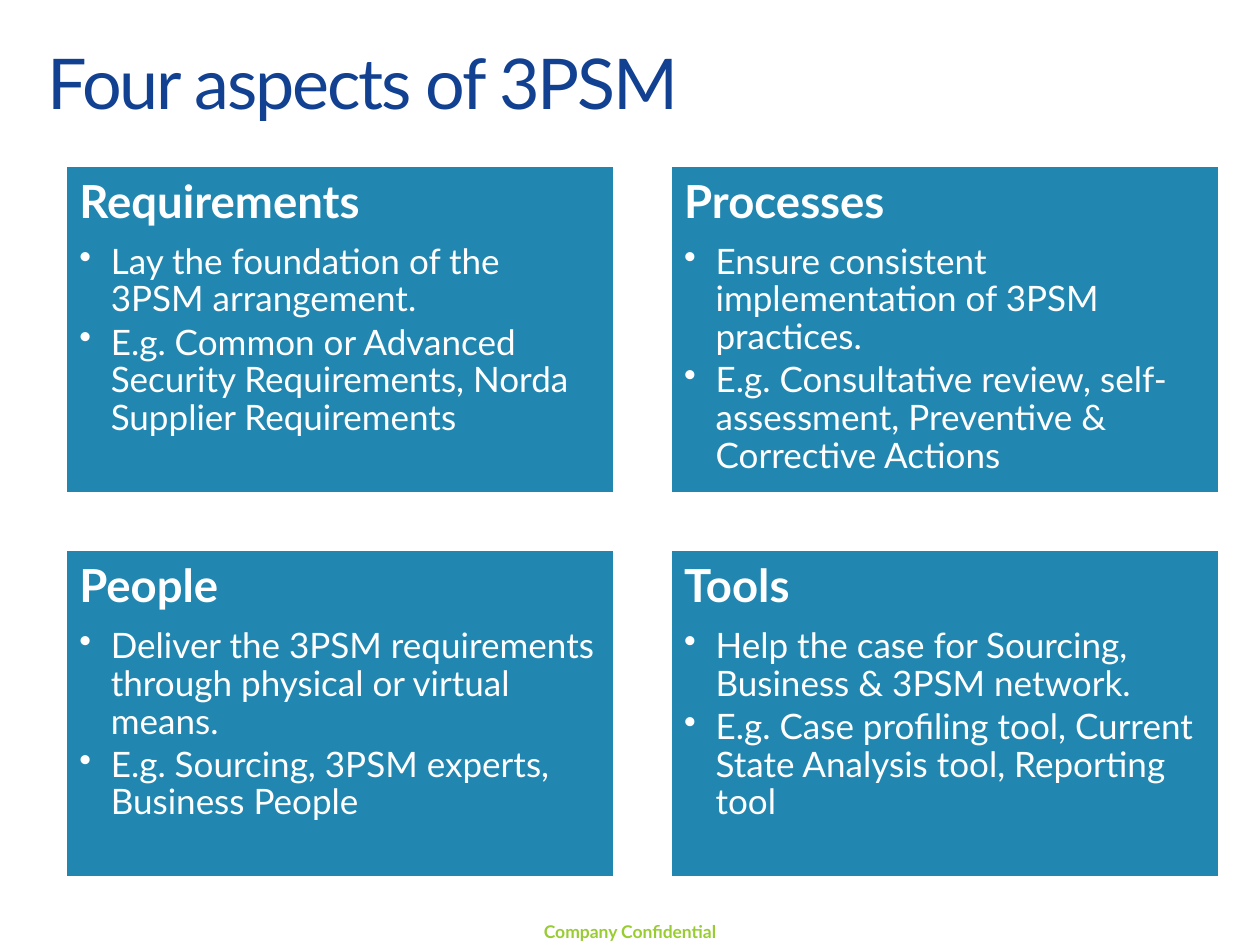
from lxml.etree import SubElement
from pptx import Presentation
from pptx.dml.color import RGBColor
from pptx.enum.shapes import MSO_SHAPE
from pptx.enum.text import MSO_ANCHOR, MSO_AUTO_SIZE, PP_ALIGN
from pptx.oxml.ns import qn
from pptx.util import Inches, Pt

FONT = "Lato"
WHITE, BLUE, NAVY, GREEN = "FFFFFF", "2187B0", "124191", "99CC33"

ASPECTS = [
    ("Requirements", [
        "Lay the foundation of the 3PSM arrangement.",
        "E.g. Common or Advanced Security Requirements, Norda Supplier Requirements",
    ]),
    ("Processes", [
        "Ensure consistent implementation of 3PSM practices.",
        "E.g. Consultative review, self-assessment, Preventive & Corrective Actions",
    ]),
    ("People", [
        "Deliver the 3PSM requirements through physical or virtual means.",
        "E.g. Sourcing, 3PSM experts, Business People",
    ]),
    ("Tools", [
        "Help the case for Sourcing, Business & 3PSM network.",
        "E.g. Case profiling tool, Current State Analysis tool, Reporting tool",
    ]),
]


def color(hex_string):
    return RGBColor.from_string(hex_string)


def write(paragraph, text, size, hex_string, bold=False, align=PP_ALIGN.LEFT):
    paragraph.text = text
    paragraph.alignment = align
    font = paragraph.font
    font.name, font.size, font.bold = FONT, Pt(size), bold
    font.color.rgb = color(hex_string)


def set_insets(frame, inset):
    frame.margin_left = frame.margin_right = Inches(inset)
    frame.margin_top = frame.margin_bottom = Inches(inset)


def add_bullet(paragraph):
    properties = paragraph._p.get_or_add_pPr()
    properties.set("marL", str(Inches(0.25)))
    properties.set("indent", str(Inches(-0.25)))
    # The bullet must come before the default run properties
    bullet = SubElement(properties, qn("a:buChar"), char="•")
    properties.find(qn("a:defRPr")).addprevious(bullet)


def place_title(slide, text, left, top, width, height):
    title = slide.shapes.title
    title.left, title.top = Inches(left), Inches(top)
    title.width, title.height = Inches(width), Inches(height)
    frame = title.text_frame
    frame.auto_size = MSO_AUTO_SIZE.NONE
    set_insets(frame, 0)
    paragraph = frame.paragraphs[0]
    write(paragraph, text, 40, NAVY)
    paragraph.runs[0]._r.get_or_add_rPr().set("spc", "-120")


def add_aspect(slide, heading, points, left, top, width, height):
    card = slide.shapes.add_shape(
        MSO_SHAPE.RECTANGLE, Inches(left), Inches(top), Inches(width), Inches(height))
    card.shadow.inherit = False
    card.fill.solid()
    card.fill.fore_color.rgb = color(BLUE)
    card.line.color.rgb = color(WHITE)
    card.line.width = Pt(2)

    frame = card.text_frame
    frame.word_wrap = True
    frame.vertical_anchor = MSO_ANCHOR.TOP
    set_insets(frame, 0.11)
    paragraph = frame.paragraphs[0]
    write(paragraph, heading, 26, WHITE, bold=True)
    paragraph.line_spacing, paragraph.space_after = 0.9, Pt(9.1)
    for point in points:
        paragraph = frame.add_paragraph()
        write(paragraph, point, 20, WHITE)
        paragraph.level = 1
        paragraph.line_spacing, paragraph.space_after = 0.9, Pt(3)
        add_bullet(paragraph)


def add_aspect_grid(slide, left, top, width, height, gap_x=0.44, gap_y=0.44):
    card_width, card_height = (width - gap_x) / 2, (height - gap_y) / 2
    for index, (heading, points) in enumerate(ASPECTS):
        row, column = divmod(index, 2)
        add_aspect(slide, heading, points,
                   left + column * (card_width + gap_x),
                   top + row * (card_height + gap_y),
                   card_width, card_height)


def add_footer(slide, text, left, top, width, height):
    footer = slide.shapes.add_textbox(
        Inches(left), Inches(top), Inches(width), Inches(height))
    footer.text_frame.word_wrap = True
    write(footer.text_frame.paragraphs[0], text, 10, GREEN,
          bold=True, align=PP_ALIGN.CENTER)


def main():
    presentation = Presentation()
    presentation.slide_width, presentation.slide_height = Inches(10), Inches(7.5)
    slide = presentation.slides.add_slide(presentation.slide_layouts[5])
    place_title(slide, "Four aspects of 3PSM", 0.38, 0.31, 9.17, 0.67)
    add_aspect_grid(slide, 0.52, 1.31, 9.16, 5.66)
    add_footer(slide, "Company Confidential", 0, 7.26, 10, 0.27)
    presentation.save("out.pptx")


if __name__ == "__main__":
    main()
